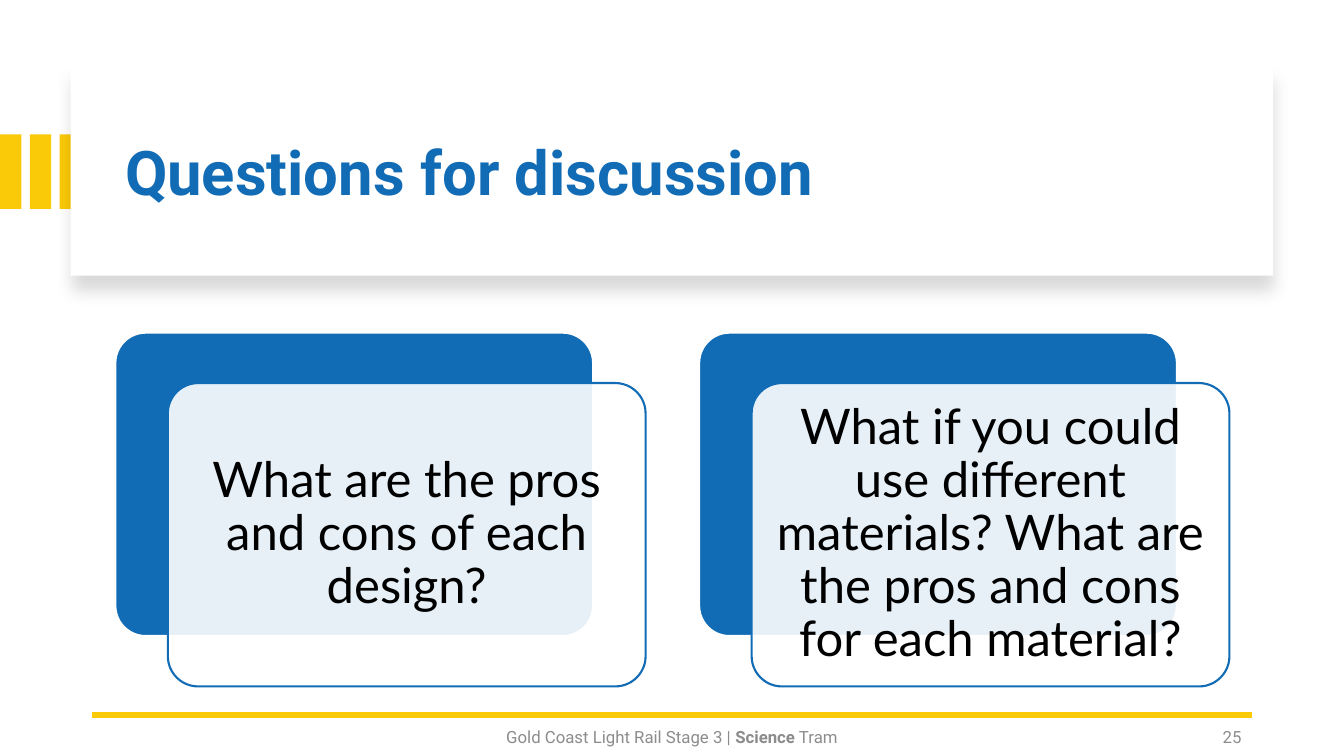
from dataclasses import dataclass

from lxml.etree import SubElement
from pptx import Presentation
from pptx.dml.color import RGBColor
from pptx.enum.shapes import MSO_CONNECTOR, MSO_SHAPE
from pptx.enum.text import MSO_ANCHOR, MSO_AUTO_SIZE, PP_ALIGN
from pptx.oxml import parse_xml
from pptx.oxml.ns import qn
from pptx.util import Pt

NAMESPACE = "http://schemas.openxmlformats.org/drawingml/2006/main"


@dataclass(frozen=True)
class Theme:
    blue: str = "116CB5"
    yellow: str = "FAC908"
    white: str = "FFFFFF"
    black: str = "000000"
    grey: str = "8C8C8C"
    heading_font: str = "Roboto"
    card_font: str = "Lato"
    title_size: float = 44
    card_size: float = 35
    footer_size: float = 12


THEME = Theme()
TITLE_FORMAT = {"name": THEME.heading_font, "size": Pt(THEME.title_size), "bold": True}
CARD_FORMAT = {"name": THEME.card_font, "size": Pt(THEME.card_size), "bold": False}
FOOTER_FORMAT = {"name": THEME.heading_font, "size": Pt(THEME.footer_size), "bold": False}

QUESTIONS = [
    "What are the pros and cons of each design?",
    "What if you could use different materials? "
    "What are the pros and cons for each material?",
]


def points(*values):
    return [Pt(value) for value in values]


def write(shape, spans, font_format, color, alignment, inset=(7.2, 3.6), line_spacing=None):
    """Fill a shape with one paragraph made of (text, bold) spans."""
    horizontal, vertical = points(*inset)
    frame_format = {
        "word_wrap": True, "auto_size": MSO_AUTO_SIZE.NONE,
        "vertical_anchor": MSO_ANCHOR.MIDDLE,
        "margin_left": horizontal, "margin_right": horizontal,
        "margin_top": vertical, "margin_bottom": vertical,
    }
    for name, value in frame_format.items():
        setattr(shape.text_frame, name, value)
    para = shape.text_frame.paragraphs[0]
    para.alignment = alignment
    para.line_spacing = line_spacing
    for text, bold in spans:
        span = para.add_run()
        span.text = text
        for name, value in {**font_format, "bold": bold}.items():
            setattr(span.font, name, value)
        span.font.color.rgb = RGBColor.from_string(color)


def add_block(page, kind, box, fill, outline=None):
    shape = page.shapes.add_shape(kind, *points(*box))
    shape.shadow.inherit = False
    shape.fill.solid()
    shape.fill.fore_color.rgb = RGBColor.from_string(fill)
    if outline:
        shape.line.color.rgb = RGBColor.from_string(outline)
        shape.line.width = Pt(1.5)
    else:
        shape.line.fill.background()
    return shape


def add_soft_shadow(shape):
    properties = shape.element.spPr
    properties.remove(properties.find(qn("a:effectLst")))
    properties.append(parse_xml(
        f'<a:effectLst xmlns:a="{NAMESPACE}">'
        f'<a:outerShdw blurRad="{Pt(11)}" dist="{Pt(10)}" dir="5400000" rotWithShape="0">'
        f'<a:srgbClr val="{THEME.black}"><a:alpha val="15000"/></a:srgbClr>'
        '</a:outerShdw></a:effectLst>'))


def add_header(page, box, title_text):
    left, top, width, height = box
    stripe_pitch = 21.3
    for index in range(3):
        stripe = (index * stripe_pitch, top + 48, 15.3, 53.3)
        add_block(page, MSO_SHAPE.RECTANGLE, stripe, THEME.yellow)
    add_soft_shadow(add_block(page, MSO_SHAPE.RECTANGLE, box, THEME.white))

    title = page.shapes.title
    title.left, title.top, title.width, title.height = points(
        left + 31.7, top + 16, width - 57.6, height - 26.6)
    write(title, [(title_text, True)], TITLE_FORMAT, THEME.blue, PP_ALIGN.LEFT,
          line_spacing=0.9)
    # The title must lie in front of the white panel.
    title.element.getparent().append(title.element)


def add_question_card(page, box, question):
    """Place a blue card with a translucent card, holding the text, shifted over it."""
    left, top, width, height = box
    shift_right, shift_down = 37.5, 36
    back = add_block(page, MSO_SHAPE.ROUNDED_RECTANGLE, box, THEME.blue, THEME.white)
    front_box = (left + shift_right, top + shift_down, width, height)
    front = add_block(page, MSO_SHAPE.ROUNDED_RECTANGLE, front_box, THEME.white, THEME.blue)
    for card in (back, front):
        card.adjustments[0] = 0.1
    fill_color = front.element.spPr.find(qn("a:solidFill")).find(qn("a:srgbClr"))
    SubElement(fill_color, qn("a:alpha")).set("val", "90000")
    write(front, [(question, False)], CARD_FORMAT, THEME.black, PP_ALIGN.CENTER,
          inset=(10.8, 10.8), line_spacing=0.9)


def add_questions(page, box):
    left, top, width, height = box
    card_pitch = 417
    for index, question in enumerate(QUESTIONS):
        add_question_card(page, (left + index * card_pitch, top, width, height), question)


def add_footer(page, box):
    left, top, width, height = box
    rule = page.shapes.add_connector(
        MSO_CONNECTOR.STRAIGHT, *points(left + width, top, left, top))
    rule.line.color.rgb = RGBColor.from_string(THEME.yellow)
    rule.line.width = Pt(4.5)
    SubElement(rule.element.spPr, qn("a:effectLst"))

    project = [("Gold Coast Light Rail Stage 3 | ", False), ("Science", True), (" Tram", False)]
    number_width = 216
    footer_parts = [
        (left + (width - 324) / 2, 324, project, PP_ALIGN.CENTER),
        (left + width - number_width, number_width, [("25", False)], PP_ALIGN.RIGHT),
    ]
    for part_left, part_width, spans, alignment in footer_parts:
        text_box = page.shapes.add_textbox(*points(part_left, top + 1, part_width, height))
        write(text_box, spans, FOOTER_FORMAT, THEME.grey, alignment)


def main():
    deck = Presentation()
    deck.slide_width, deck.slide_height = points(960, 540)
    page = deck.slides.add_slide(deck.slide_layouts[5])
    add_header(page, (50.4, 48, 859, 149), "Questions for discussion")
    add_footer(page, (66, 510.5, 828, 29))
    add_questions(page, (82.4, 237.6, 341.3, 216.7))
    deck.save("out.pptx")


if __name__ == "__main__":
    main()
